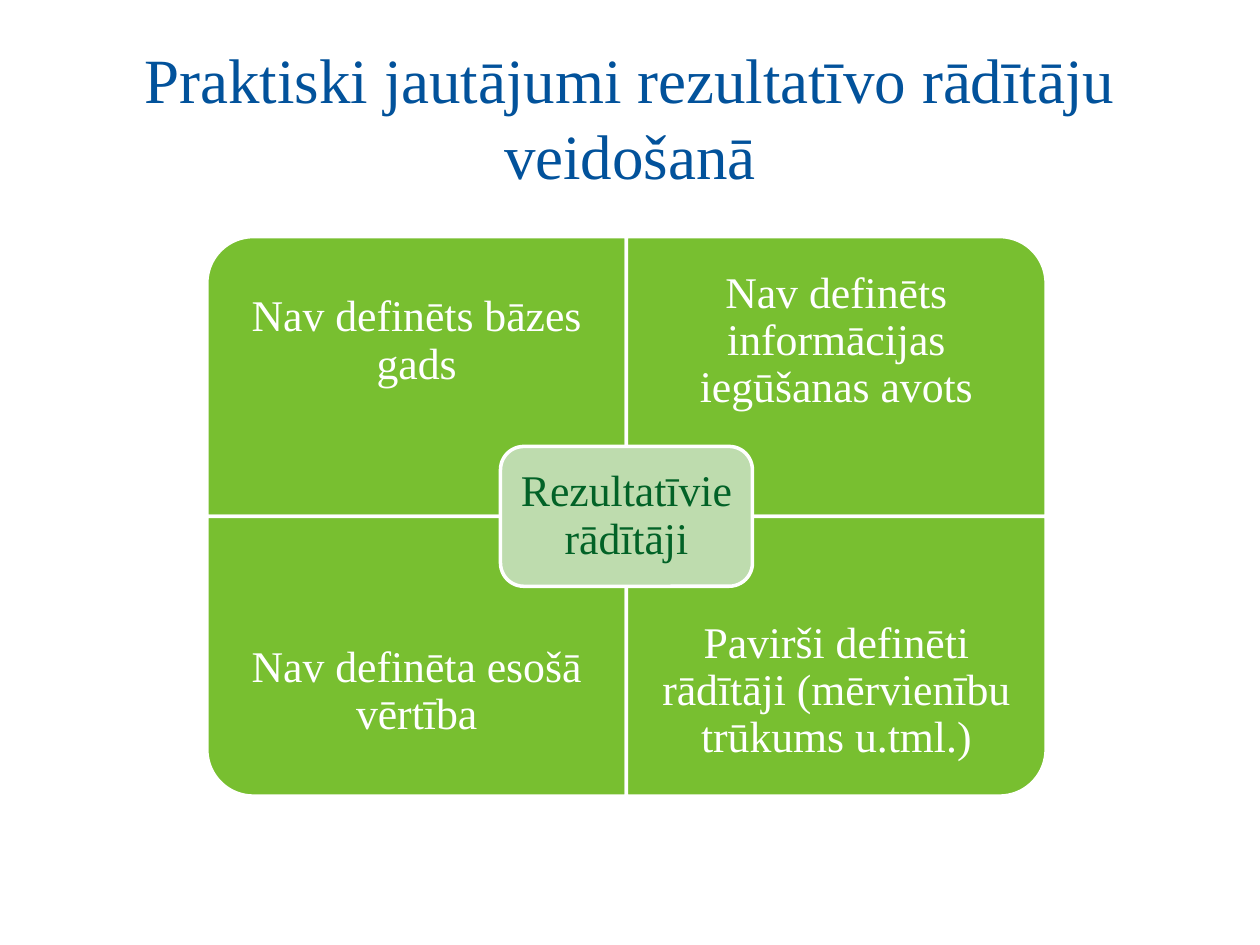
import math

import pptx
import pptx.dml.color
import pptx.enum.shapes
import pptx.enum.text
import pptx.util

Cm = pptx.util.Cm
Pt = pptx.util.Pt

COLORS = {
    "title": "02529B",
    "quarter": "78BF30",
    "core": "BEDCAE",
    "core_text": "026227",
    "white": "FFFFFF",
}


def rgb(name):
    return pptx.dml.color.RGBColor.from_string(COLORS[name])


class MatrixSlide:
    font = "Times New Roman"
    title_size = 36
    label_size = 25
    line_width = 2

    def __init__(self, deck):
        self.page = deck.slides.add_slide(deck.slide_layouts[5])

    def set_label(self, shape, text, size, color, insets, spacing=None):
        """Insets are left, top, right, bottom in centimetres."""
        frame = shape.text_frame
        frame.text = text
        frame.word_wrap = True
        frame.vertical_anchor = pptx.enum.text.MSO_ANCHOR.MIDDLE
        (frame.margin_left, frame.margin_top,
         frame.margin_right, frame.margin_bottom) = map(Cm, insets)
        para = frame.paragraphs[0]
        para.alignment = pptx.enum.text.PP_ALIGN.CENTER
        para.line_spacing = spacing
        for span in para.runs:
            span.font.name = self.font
            span.font.size = Pt(size)
            span.font.color.rgb = rgb(color)

    def paint(self, shape, fill):
        shape.shadow.inherit = False
        shape.fill.solid()
        shape.fill.fore_color.rgb = rgb(fill)
        shape.line.color.rgb = rgb("white")
        shape.line.width = Pt(self.line_width)

    def title(self, text, left, top, width, height):
        box = self.page.shapes.title
        box.left, box.top, box.width, box.height = map(Cm, (left, top, width, height))
        self.set_label(box, text, self.title_size, "title", (0.25, 0.13, 0.25, 0.13))

    def quarter(self, text, center, size, side_x, side_y, radius):
        """Draw one quarter, rounded at its outer corner; sides are -1 or 1."""
        (center_x, center_y), (width, height) = center, size
        steps = 24
        outline = [(width, 0)]
        for step in range(steps + 1):
            angle = math.pi / 2 * step / steps
            outline.append((width - radius + radius * math.cos(angle),
                            height - radius + radius * math.sin(angle)))
        outline.append((0, height))
        points = [(Cm(center_x + side_x * x), Cm(center_y + side_y * y))
                  for x, y in outline]
        builder = self.page.shapes.build_freeform(Cm(center_x), Cm(center_y))
        builder.add_line_segments(points, close=True)
        shape = builder.convert_to_shape()
        self.paint(shape, "quarter")
        # The larger inset keeps the text clear of the core
        top, bottom = (0.48, 1.9) if side_y < 0 else (1.9, 0.48)
        self.set_label(shape, text, self.label_size, "white",
                       (0.48, top, 0.48, bottom), 0.9)

    def core(self, text, center, width, height):
        shape = self.page.shapes.add_shape(
            pptx.enum.shapes.MSO_SHAPE.ROUNDED_RECTANGLE,
            Cm(center[0] - width / 2), Cm(center[1] - height / 2),
            Cm(width), Cm(height))
        self.paint(shape, "core")
        self.set_label(shape, text, self.label_size, "core_text", (0.25,) * 4, 0.9)


def main():
    deck = pptx.Presentation()
    deck.slide_width, deck.slide_height = Cm(25.4), Cm(19.05)
    matrix = MatrixSlide(deck)

    # Title
    matrix.title("Praktiski jautājumi rezultatīvo rādītāju veidošanā",
                 1.27, 0.76, 22.86, 3.18)

    # Four quarters around a common centre
    center = (12.63, 10.41)
    quarters = [
        ("Nav definēts bāzes gads", -1, -1),
        ("Nav definēts informācijas iegūšanas avots", 1, -1),
        ("Nav definēta esošā vērtība", -1, 1),
        ("Pavirši definēti rādītāji (mērvienību trūkums u.tml.)", 1, 1),
    ]
    for text, side_x, side_y in quarters:
        matrix.quarter(text, center, (8.46, 5.64), side_x, side_y, 0.94)

    # Core label
    matrix.core("Rezultatīvie rādītāji", center, 5.08, 2.82)

    deck.save("out.pptx")


if __name__ == "__main__":
    main()
